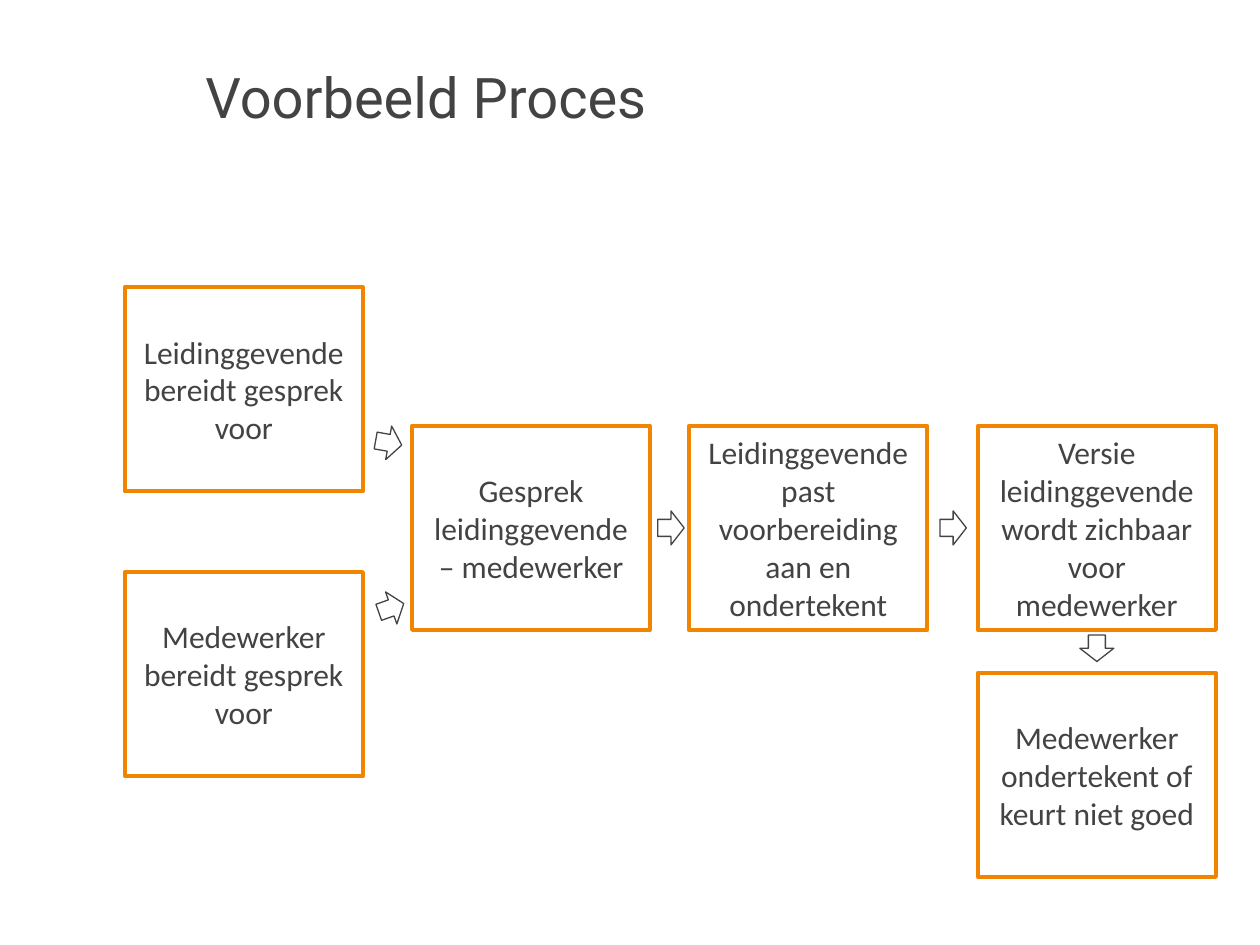
import pptx
import pptx.util
import pptx.dml.color
import pptx.enum.shapes
import pptx.enum.text

Inches = pptx.util.Inches
Pt = pptx.util.Pt
RGBColor = pptx.dml.color.RGBColor
Shape = pptx.enum.shapes.MSO_SHAPE
Align = pptx.enum.text.PP_ALIGN
Anchor = pptx.enum.text.MSO_ANCHOR

ORANGE = RGBColor(0xF1, 0x85, 0x00)
GREY = RGBColor(0x42, 0x43, 0x42)
WHITE = RGBColor(0xFF, 0xFF, 0xFF)

BOX_W, BOX_H = 1.89, 1.62
ARROW_W, ARROW_H = 0.21, 0.27
START, TALK, ADAPT, SHARE = 0.99, 3.27, 5.47, 7.76
ROW = 3.38
MID = ROW + (BOX_H - ARROW_H) / 2

STEPS = [
    (START, 2.28, "Leidinggevende bereidt gesprek voor"),
    (START, 4.54, "Medewerker bereidt gesprek voor"),
    (TALK, ROW, "Gesprek leidinggevende – medewerker"),
    (ADAPT, ROW, "Leidinggevende past voorbereiding aan en ondertekent"),
    (SHARE, ROW, "Versie leidinggevende wordt zichbaar voor medewerker"),
    (SHARE, 5.34, "Medewerker ondertekent of keurt niet goed"),
]
ARROWS = [
    (2.98, ROW, 10),
    (3.0, 4.69, 340.5),
    (5.22, MID, 0),
    (7.46, MID, 0),
    (SHARE + (BOX_W - ARROW_W) / 2, 5.01, 90),
]


def write(shape, text, size=18, font="Calibri", align=Align.CENTER):
    frame = shape.text_frame
    frame.word_wrap = True
    frame.vertical_anchor = Anchor.MIDDLE
    para = frame.paragraphs[0]
    para.alignment = align
    run = para.add_run()
    run.text = text
    run.font.size = Pt(size)
    run.font.name = font
    run.font.bold = False
    run.font.color.rgb = GREY


class Flow:
    def __init__(self, slide):
        self.slide = slide

    def title(self, text):
        shape = self.slide.shapes.title
        shape.left, shape.top = Inches(1.53), Inches(0.4)
        shape.width, shape.height = Inches(8.12), Inches(0.73)
        write(shape, text, size=32, font="Roboto", align=Align.LEFT)

    def shape(self, kind, x, y, w, h, color, weight):
        shape = self.slide.shapes.add_shape(
            kind, Inches(x), Inches(y), Inches(w), Inches(h))
        shape.shadow.inherit = False
        shape.line.color.rgb = color
        shape.line.width = Pt(weight)
        return shape

    def step(self, x, y, text):
        box = self.shape(Shape.RECTANGLE, x, y, BOX_W, BOX_H, ORANGE, 2.25)
        box.fill.background()
        write(box, text)

    def arrow(self, x, y, turn):
        arrow = self.shape(
            Shape.RIGHT_ARROW, x, y, ARROW_W, ARROW_H, GREY, 0.75)
        arrow.fill.solid()
        arrow.fill.fore_color.rgb = WHITE
        arrow.rotation = turn


def main():
    deck = pptx.Presentation()
    deck.slide_width, deck.slide_height = Inches(10), Inches(7.5)
    flow = Flow(deck.slides.add_slide(deck.slide_layouts[5]))
    flow.title("Voorbeeld Proces")
    for step in STEPS:
        flow.step(*step)
    for arrow in ARROWS:
        flow.arrow(*arrow)
    deck.save("out.pptx")


if __name__ == "__main__":
    main()
